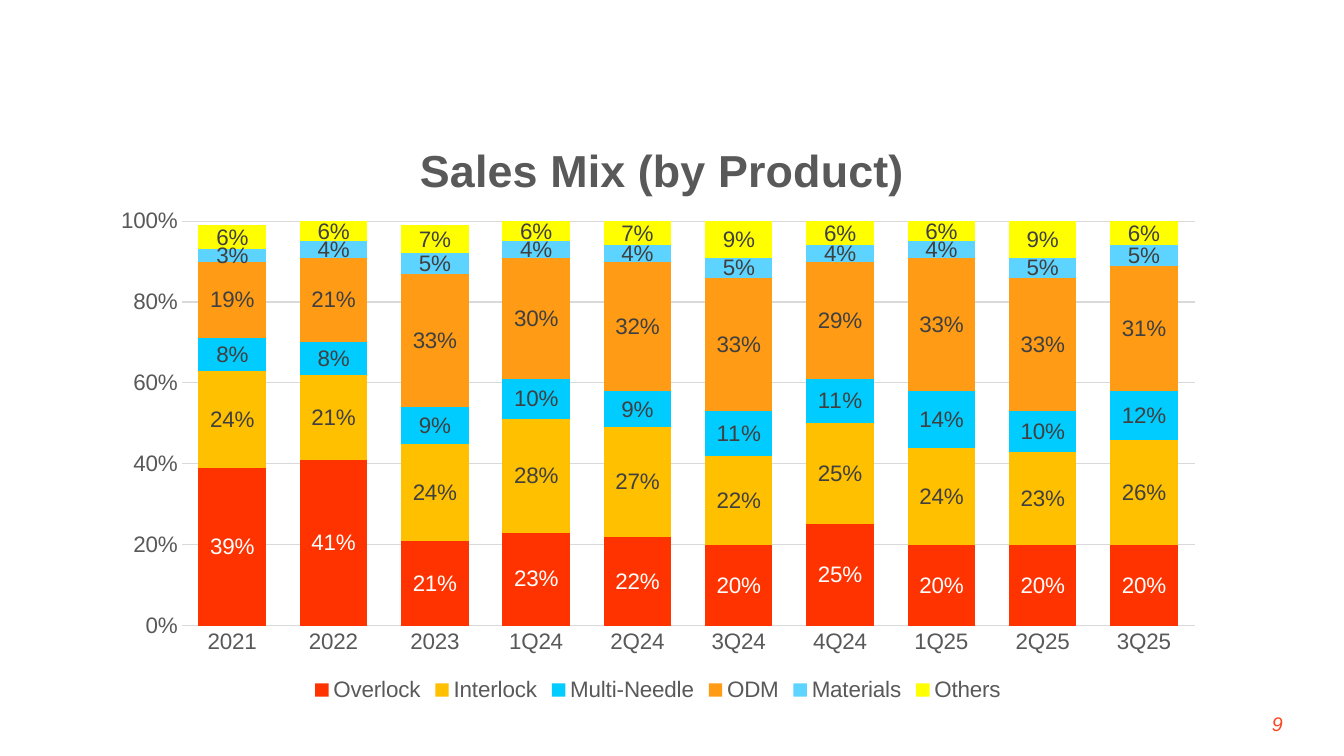
from dataclasses import dataclass

from lxml.etree import SubElement
from pptx import Presentation
from pptx.chart.data import CategoryChartData
from pptx.dml.color import RGBColor
from pptx.enum.chart import XL_CHART_TYPE as ChartType
from pptx.enum.chart import XL_LABEL_POSITION as LabelPosition
from pptx.enum.chart import XL_LEGEND_POSITION as LegendPosition
from pptx.enum.chart import XL_TICK_MARK as TickMark
from pptx.enum.text import PP_ALIGN as Align
from pptx.oxml import parse_xml
from pptx.oxml.ns import nsdecls, qn
from pptx.util import Inches, Pt


@dataclass(frozen=True)
class Theme:
    font: str = "Arial"
    title_size: int = 32
    chart_size: int = 16
    page_size: int = 14
    page_color: str = "FA461E"
    axis_text: str = "595959"
    grid_line: str = "D9D9D9"
    dark_label: str = "404040"
    light_label: str = "FFFFFF"


PERIODS = ["2021", "2022", "2023", "1Q24", "2Q24",
           "3Q24", "4Q24", "1Q25", "2Q25", "3Q25"]
# Product: fill colour and share of sales in percent
PRODUCTS = {
    "Overlock": ("FF3300", [39, 41, 21, 23, 22, 20, 25, 20, 20, 20]),
    "Interlock": ("FFC000", [24, 21, 24, 28, 27, 22, 25, 24, 23, 26]),
    "Multi-Needle": ("00CCFF", [8, 8, 9, 10, 9, 11, 11, 14, 10, 12]),
    "ODM": ("FF9B15", [19, 21, 33, 30, 32, 33, 29, 33, 33, 31]),
    "Materials": ("5DD4FF", [3, 4, 5, 4, 4, 5, 4, 4, 5, 5]),
    "Others": ("FFFF00", [6, 6, 7, 6, 7, 9, 6, 6, 9, 6]),
}


def style_font(font, name, size, color, bold=False, italic=False):
    font.name, font.size = name, Pt(size)
    font.bold, font.italic = bold, italic
    font.color.rgb = RGBColor.from_string(color)


def write_text(frame, text, align=Align.LEFT, **style):
    paragraph = frame.paragraphs[0]
    paragraph.alignment = align
    run = paragraph.add_run()
    run.text = text
    style_font(run.font, **style)


def place_part(element, **shares):
    """Fix a chart part's place, in shares of the chart's size."""
    layout = element.find(qn("c:layout"))
    if layout is None:
        layout = parse_xml(f"<c:layout {nsdecls('c')}/>")
        element.insert(0, layout)
    manual = SubElement(layout, qn("c:manualLayout"))
    if "w" in shares:
        SubElement(manual, qn("c:layoutTarget")).set("val", "inner")
    for side in "xy":
        SubElement(manual, qn(f"c:{side}Mode")).set("val", "edge")
    for side, share in shares.items():
        SubElement(manual, qn(f"c:{side}")).set("val", str(share))


class SlideBuilder:
    def __init__(self, presentation, theme):
        self.theme = theme
        self.width = presentation.slide_width
        self.height = presentation.slide_height
        self.slide = presentation.slides.add_slide(presentation.slide_layouts[6])

    def box(self, left, top, width, height):
        """Turn percentages of the slide's size into lengths."""
        return (int(self.width * left / 100), int(self.height * top / 100),
                int(self.width * width / 100), int(self.height * height / 100))

    def page_number(self, number, *place):
        frame = self.slide.shapes.add_textbox(*self.box(*place)).text_frame
        frame.word_wrap = True
        write_text(frame, number, align=Align.RIGHT, name=self.theme.font,
                   size=self.theme.page_size, color=self.theme.page_color, italic=True)

    def share_chart(self, title, periods, products, *place):
        data = CategoryChartData(number_format="0%")
        data.categories = periods
        for name, (_, percents) in products.items():
            data.add_series(name, [percent / 100 for percent in percents])
        chart = self.slide.shapes.add_chart(
            ChartType.COLUMN_STACKED, *self.box(*place), data).chart
        self.chart_title(chart, title)
        self.chart_axes(chart)
        self.chart_columns(chart, products)
        self.chart_legend(chart)

    def chart_title(self, chart, title):
        write_text(chart.chart_title.text_frame, title, align=Align.CENTER,
                   name=self.theme.font, size=self.theme.title_size,
                   color=self.theme.axis_text, bold=True)
        place_part(chart.chart_title._element, x=0.28, y=0.05)

    def chart_axes(self, chart):
        theme = self.theme
        categories, values = chart.category_axis, chart.value_axis
        for axis in (categories, values):
            axis.major_tick_mark = axis.minor_tick_mark = TickMark.NONE
            style_font(axis.tick_labels.font, theme.font, theme.chart_size, theme.axis_text)
        values.minimum_scale, values.maximum_scale, values.major_unit = 0, 1, 0.2
        values.tick_labels.number_format = "0%"
        values.tick_labels.number_format_is_linked = False
        values.format.line.fill.background()
        values.has_major_gridlines = True
        for line in (categories.format.line, values.major_gridlines.format.line):
            line.width = Pt(0.75)
            line.color.rgb = RGBColor.from_string(theme.grid_line)

    def chart_columns(self, chart, products):
        theme = self.theme
        plot = chart.plots[0]
        plot.gap_width, plot.overlap = 50, 100
        plot.vary_by_categories = False
        for position, (series, (color, _)) in enumerate(zip(plot.series, products.values())):
            series.format.fill.solid()
            series.format.fill.fore_color.rgb = RGBColor.from_string(color)
            labels = series.data_labels
            labels.show_value = True
            labels.position = LabelPosition.CENTER
            labels.number_format, labels.number_format_is_linked = "0%", False
            style_font(labels.font, theme.font, theme.chart_size,
                       theme.dark_label if position else theme.light_label)
        place_part(chart._chartSpace.chart.plotArea, x=0.074, y=0.196, w=0.906, h=0.67)

    def chart_legend(self, chart):
        chart.has_legend = True
        chart.legend.position = LegendPosition.BOTTOM
        chart.legend.include_in_layout = False
        style_font(chart.legend.font, self.theme.font,
                   self.theme.chart_size, self.theme.axis_text)


def main():
    presentation = Presentation()
    presentation.slide_width, presentation.slide_height = Inches(13.33), Inches(7.5)
    builder = SlideBuilder(presentation, Theme())
    builder.page_number("9", 90.55, 93.47, 5.63, 5.33)
    builder.share_chart("Sales Mix (by Product)", PERIODS, PRODUCTS,
                        7.35, 13.6, 83.2, 79.87)
    presentation.save("out.pptx")


if __name__ == "__main__":
    main()
